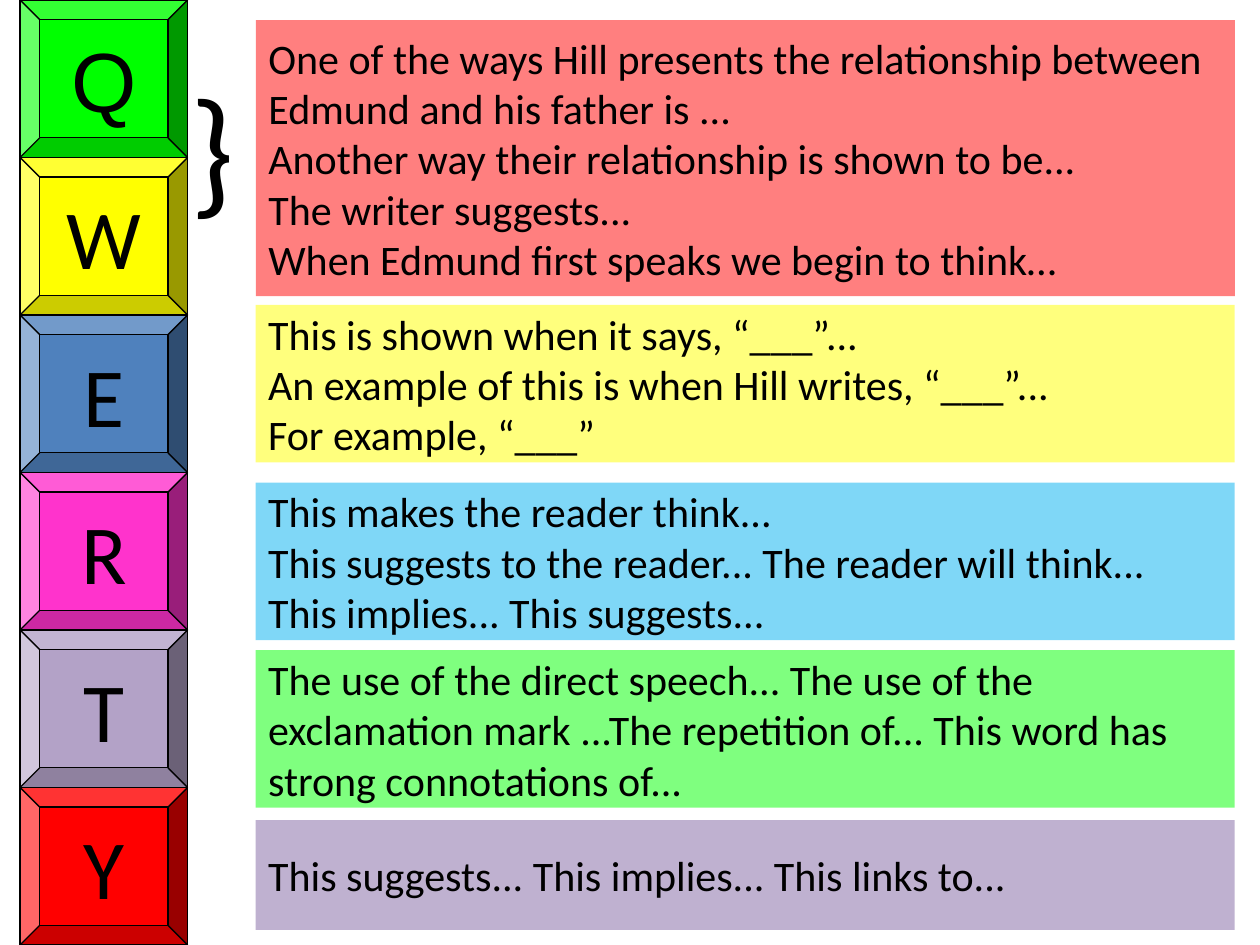
from lxml import etree
from pptx import Presentation
from pptx.dml.color import RGBColor
from pptx.enum.shapes import MSO_SHAPE
from pptx.enum.text import MSO_ANCHOR, MSO_AUTO_SIZE, PP_ALIGN
from pptx.oxml.ns import qn
from pptx.util import Inches, Pt

BEVEL, RECTANGLE = MSO_SHAPE.BEVEL, MSO_SHAPE.RECTANGLE
MIDDLE, TOP = MSO_ANCHOR.MIDDLE, MSO_ANCHOR.TOP
LEFT, CENTER = PP_ALIGN.LEFT, PP_ALIGN.CENTER
FIXED, GROW = MSO_AUTO_SIZE.NONE, MSO_AUTO_SIZE.SHAPE_TO_FIT_TEXT

COLORS = {
    "text": "000000",
    "green": "00FF00",
    "yellow": "FFFF00",
    "blue": "4F81BD",
    "pink": "FF33CC",
    "lilac": "B3A2C7",
    "red": "FF0000",
    "sky": "00B0F0",
    "purple": "8064A2",
}

KEY_LEFT, KEY_WIDTH, KEY_HEIGHT = 0.16, 1.33, 1.25
KEYS = [
    ("Q", "green", "Arial"),
    ("W", "yellow", "Calibri"),
    ("E", "blue", "Calibri"),
    ("R", "pink", "Calibri"),
    ("T", "lilac", "Calibri"),
    ("Y", "red", "Calibri"),
]

PANEL_LEFT, PANEL_WIDTH = 2.03, 7.77
# A vertical tab is a line break within the title's single paragraph.
OPENERS = "\v".join([
    "One of the ways Hill presents the relationship between Edmund and his father is ...",
    "Another way their relationship is shown to be...",
    "The writer suggests...",
    "When Edmund first speaks we begin to think…",
])
# top, height, colour, opacity in percent, text
PANELS = [
    (2.42, 1.25, "yellow", 51,
     "This is shown when it says, “___”...\n"
     "An example of this is when Hill writes, “___”...\n"
     "For example, “___”"),
    (3.83, 1.25, "sky", 50,
     "This makes the reader think...\n"
     "This suggests to the reader... The reader will think... "
     "This implies... This suggests..."),
    (5.16, 1.25, "green", 50,
     "The use of the direct speech... The use of the exclamation mark "
     "...The repetition of... This word has strong connotations of..."),
    (6.51, 0.87, "purple", 50,
     "This suggests... This implies... This links to..."),
]


def rgb(name):
    return RGBColor.from_string(COLORS[name])


def fill_shape(shape, color, opacity=100):
    shape.fill.solid()
    shape.fill.fore_color.rgb = rgb(color)
    if opacity < 100:
        color_element = shape.fill._xPr.find(qn("a:solidFill"))[0]
        alpha = etree.SubElement(color_element, qn("a:alpha"))
        alpha.set("val", str(opacity * 1000))


def write_text(shape, text, size, font="Calibri", align=LEFT, anchor=MIDDLE,
               auto_size=FIXED):
    frame = shape.text_frame
    frame.text = text
    frame.word_wrap = True
    frame.auto_size = auto_size
    frame.vertical_anchor = anchor
    for paragraph in frame.paragraphs:
        paragraph.alignment = align
        paragraph.font.size = Pt(size)
        paragraph.font.name = font
        paragraph.font.color.rgb = rgb("text")


def add_opening_panel(slide):
    title = slide.shapes.title
    title.left, title.top = Inches(PANEL_LEFT), Inches(0.16)
    title.width, title.height = Inches(PANEL_WIDTH), Inches(2.19)
    fill_shape(title, "red", 50)
    write_text(title, OPENERS, 24)


def add_key(slide, row, letter, color, font):
    key = slide.shapes.add_shape(
        BEVEL, Inches(KEY_LEFT), Inches(row * KEY_HEIGHT),
        Inches(KEY_WIDTH), Inches(KEY_HEIGHT))
    key.shadow.inherit = False
    fill_shape(key, color)
    key.line.color.rgb = rgb("text")
    key.line.width = Pt(0.75)
    write_text(key, letter, 48, font, CENTER)


def add_brace(slide):
    """Tie the first two keys to the opening panel."""
    brace = slide.shapes.add_textbox(
        Inches(1.41), Inches(0.43), Inches(0.55), Inches(1.45))
    write_text(brace, "}", 80, anchor=TOP, auto_size=GROW)


def add_panel(slide, top, height, color, opacity, text):
    panel = slide.shapes.add_shape(
        RECTANGLE, Inches(PANEL_LEFT), Inches(top),
        Inches(PANEL_WIDTH), Inches(height))
    panel.shadow.inherit = False
    panel.line.fill.background()
    fill_shape(panel, color, opacity)
    write_text(panel, text, 24)


def main():
    presentation = Presentation()
    presentation.slide_width = Inches(10)
    presentation.slide_height = Inches(7.5)
    slide = presentation.slides.add_slide(presentation.slide_layouts[0])
    subtitle = slide.placeholders[1].element
    subtitle.getparent().remove(subtitle)

    add_opening_panel(slide)
    for row, key in enumerate(KEYS):
        add_key(slide, row, *key)
    add_brace(slide)
    for panel in PANELS:
        add_panel(slide, *panel)
    presentation.save("out.pptx")


if __name__ == "__main__":
    main()
